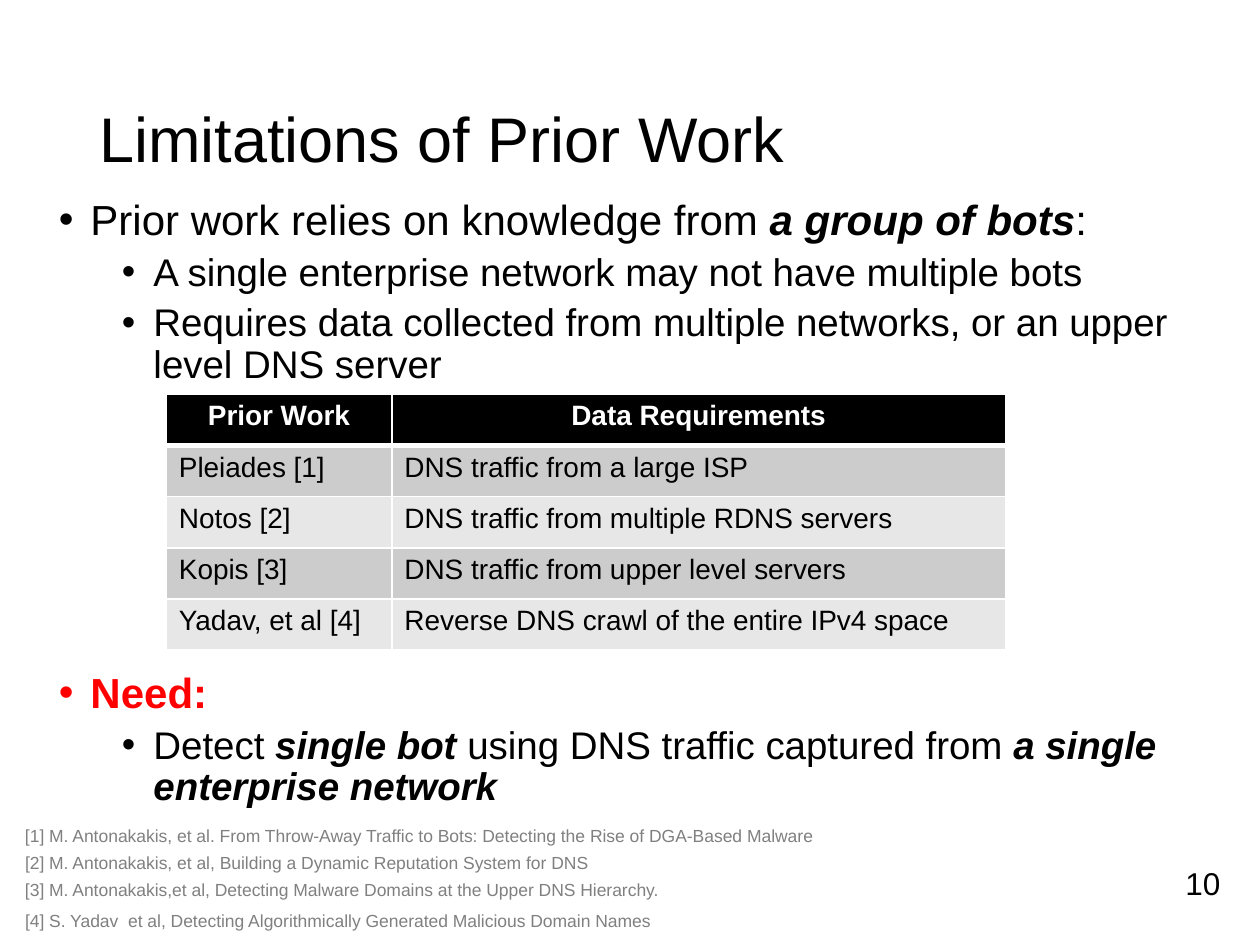
"""Builds the slide on the limits of prior work."""
from pptx import Presentation, util as u
from pptx.dml.color import RGBColor
from pptx.enum import text as t
from pptx.oxml.ns import qn
from lxml import etree

Inches, Pt = u.Inches, u.Pt
HUES = {"ink": "000000", "paper": "FFFFFF", "alert": "FF0000",
        "note": "808080", "dark": "CCCCCC", "light": "E7E7E7"}


def add_run(para, words, size, hue="ink", bold=False, slant=False):
    """Adds one styled run."""
    run = para.add_run()
    run.text = words
    font = run.font
    font.name, font.size, font.bold, font.italic = "Arial", Pt(size), bold, slant
    font.color.rgb = RGBColor.from_string(HUES[hue])


def add_box(left, top, width, height, wrap=True):
    """Adds a text box and returns its frame."""
    frame = slide.shapes.add_textbox(*map(Inches, (left, top, width, height))).text_frame
    frame.word_wrap = wrap
    return frame


deck = Presentation()
deck.slide_width, deck.slide_height = Inches(10), Inches(7.5)
slide = deck.slides.add_slide(deck.slide_layouts[6])

title = add_box(0.69, 0.4, 8.62, 1.45)
title.vertical_anchor = t.MSO_ANCHOR.MIDDLE
title.paragraphs[0].line_spacing = 0.9
add_run(title.paragraphs[0], "Limitations of Prior Work", 36)

points = [
    (0, 0, [("Prior work relies on knowledge from ",),
            ("a group of bots", "ink", True, True), (":",)]),
    (1, 5, [("A single enterprise network may not have multiple bots",)]),
    (1, 5, [("Requires data collected from multiple networks, or an upper level DNS server",)]),
    (0, 163, [("Need:", "alert", True)]),
    (1, 5, [("Detect ",), ("single bot", "ink", True, True),
            (" using DNS traffic captured from ",),
            ("a single enterprise network", "ink", True, True)]),
]
body = add_box(0.37, 1.53, 9.17, 5.22)
for i, (level, gap, parts) in enumerate(points):
    para = body.add_paragraph() if i else body.paragraphs[0]
    para.level, para.line_spacing, para.space_before = level, 0.9, Pt(gap)
    props = para._p.get_or_add_pPr()
    props.set("marL", str(Inches(0.25 + 0.5 * level)))
    props.set("indent", str(Inches(-0.25)))
    etree.SubElement(props, qn("a:buFont")).set("typeface", "Arial")
    etree.SubElement(props, qn("a:buChar")).set("char", "•")
    for words, *style in parts:
        add_run(para, words, 24 - 2 * level, *style)

rows = [
    ("Prior Work", "Data Requirements"),
    ("Pleiades [1]", "DNS traffic from a large ISP"),
    ("Notos [2]", "DNS traffic from multiple RDNS servers"),
    ("Kopis [3]", "DNS traffic from upper level servers"),
    ("Yadav, et al [4]", "Reverse DNS crawl of the entire IPv4 space"),
]
grid = slide.shapes.add_table(len(rows), 2, Inches(1.32), Inches(3.13),
                              Inches(6.66), Inches(2.03)).table
for col, width in zip(grid.columns, (1.79, 4.87)):
    col.width = Inches(width)
for r, row in enumerate(rows):
    head = r == 0
    fill = "ink" if head else "dark" if r % 2 else "light"
    for c, words in enumerate(row):
        cell = grid.cell(r, c)
        para = cell.text_frame.paragraphs[0]
        para.alignment = t.PP_ALIGN.CENTER if head else t.PP_ALIGN.LEFT
        add_run(para, words, 16, "paper" if head else "ink", head)
        props = cell._tc.get_or_add_tcPr()
        for side in "LRTB":
            thick = (head and side == "B") or (r == 1 and side == "T")
            line = etree.SubElement(props, qn(f"a:ln{side}"), w=str(Pt(3 if thick else 1)))
            paint = etree.SubElement(line, qn("a:solidFill"))
            etree.SubElement(paint, qn("a:srgbClr"), val=HUES["paper"])
        cell.fill.solid()
        cell.fill.fore_color.rgb = RGBColor.from_string(HUES[fill])

notes = [
    (6.5, 6.53, "[1] M. Antonakakis, et al. From Throw-Away Traffic to Bots: Detecting the Rise of DGA-Based Malware"),
    (6.71, 4.68, "[2] M. Antonakakis, et al, Building a Dynamic Reputation System for DNS"),
    (6.93, 5.26, "[3] M. Antonakakis,et al, Detecting Malware Domains at the Upper DNS Hierarchy."),
    (7.17, 5.19, "[4] S. Yadav  et al, Detecting Algorithmically Generated Malicious Domain Names"),
]
for top, width, words in notes:
    add_run(add_box(0.1, top, width, 0.27, False).paragraphs[0], words, 10, "note")
add_run(add_box(9.31, 6.81, 0.48, 0.4, False).paragraphs[0], "10", 18)

deck.save("out.pptx")
